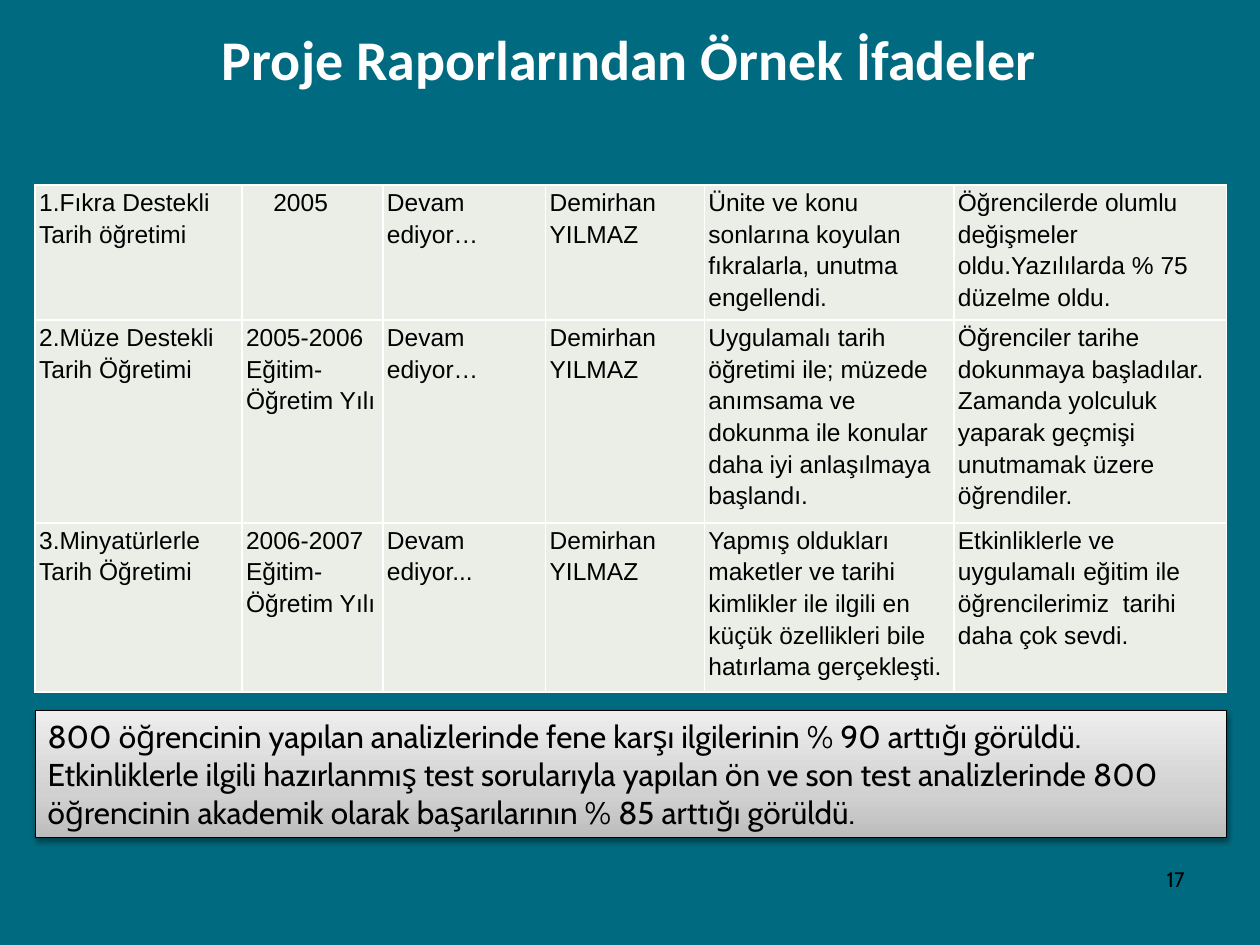
import pptx
import pptx.dml.color
import pptx.enum.shapes
import pptx.enum.text
import pptx.oxml
import pptx.oxml.ns
import pptx.util

Cm, Pt = pptx.util.Cm, pptx.util.Pt
Align, Anchor = pptx.enum.text.PP_ALIGN, pptx.enum.text.MSO_ANCHOR
NS = pptx.oxml.ns.nsdecls("a")

HUES = {"back": "006B80", "cell": "EBEDE7", "white": "FFFFFF", "black": "000000"}
FADE = [(0, "BDBDBD"), (35, "D1D1D1"), (100, "EEEEEE")]

TITLE = "Proje Raporlarından Örnek İfadeler"
STATE, NAME = "Devam ediyor…", "Demirhan YILMAZ"
ROWS = [
    ("1.Fıkra Destekli Tarih öğretimi", "2005", STATE, NAME,
     "Ünite ve konu sonlarına koyulan fıkralarla, unutma engellendi.",
     "Öğrencilerde olumlu değişmeler oldu.Yazılılarda % 75 düzelme oldu."),
    ("2.Müze Destekli Tarih Öğretimi", "2005-2006 Eğitim-Öğretim Yılı", STATE, NAME,
     "Uygulamalı tarih öğretimi ile; müzede anımsama ve dokunma ile konular daha iyi anlaşılmaya başlandı.",
     "Öğrenciler tarihe dokunmaya başladılar. Zamanda yolculuk yaparak geçmişi unutmamak üzere öğrendiler."),
    ("3.Minyatürlerle Tarih Öğretimi", "2006-2007 Eğitim-Öğretim Yılı", "Devam ediyor...", NAME,
     "Yapmış oldukları maketler ve tarihi kimlikler ile ilgili en küçük özellikleri bile hatırlama gerçekleşti.",
     "Etkinliklerle ve uygulamalı eğitim ile öğrencilerimiz  tarihi daha çok sevdi."),
]
NOTE = ("800 öğrencinin yapılan analizlerinde fene karşı ilgilerinin % 90 arttığı görüldü. "
        "Etkinliklerle ilgili hazırlanmış test sorularıyla yapılan ön ve son test analizlerinde "
        "800 öğrencinin akademik olarak başarılarının % 85 arttığı görüldü.")
PAGE = "17"

WIDE = [4.17, 2.84, 3.28, 3.2, 5.03, 5.49]
HIGH = [2.69, 4.06, 3.4]
LEFT, SPAN = 0.71, sum(WIDE)
INSET, INDENT = 0.08, 0.55

FONTS = {
    "title": {"name": "Calibri", "size": Pt(32), "bold": True},
    "cell": {"name": "Arial", "size": Pt(14)},
    "note": {"name": "Cabin", "size": Pt(18)},
    "page": {"name": "Cabin", "size": Pt(12)},
}


def apply(item, vals):
    for key, val in vals.items():
        setattr(item, key, val)


def tint(hue):
    return pptx.dml.color.RGBColor.from_string(HUES[hue])


def write(frame, text, font, hue="black", **form):
    frame.word_wrap = True
    para = frame.paragraphs[0]
    para.text = text
    apply(para, form)
    run = para.runs[0]
    apply(run.font, FONTS[font])
    run.font.color.rgb = tint(hue)


def label(slide, place, text, font, anchor=Anchor.TOP, **form):
    frame = slide.shapes.add_textbox(*map(Cm, place)).text_frame
    frame.vertical_anchor = anchor
    write(frame, text, font, **form)


def edge(cell):
    props = cell._tc.get_or_add_tcPr()
    for side in "LRTB":
        props.append(pptx.oxml.parse_xml(
            f'<a:ln{side} {NS} w="12700"><a:solidFill><a:srgbClr val="{HUES["white"]}"/>'
            f'</a:solidFill></a:ln{side}>'))


def grid(slide):
    place = (LEFT, 3.73, SPAN, sum(HIGH))
    table = slide.shapes.add_table(len(HIGH), len(WIDE), *map(Cm, place)).table
    apply(table, {"first_row": False, "horz_banding": False})
    for col, size in zip(table.columns, WIDE):
        col.width = Cm(size)
    for row, size, texts in zip(table.rows, HIGH, ROWS):
        row.height = Cm(size)
        for cell, text in zip(row.cells, texts):
            inset = INSET + INDENT if text == "2005" else INSET
            apply(cell, {"margin_left": Cm(inset), "margin_right": Cm(INSET),
                         "margin_top": 0, "margin_bottom": 0})
            edge(cell)
            cell.fill.solid()
            cell.fill.fore_color.rgb = tint("cell")
            write(cell.text_frame, text, "cell", line_spacing=1.15, space_after=Pt(10))


def panel(slide):
    kind = pptx.enum.shapes.MSO_SHAPE.RECTANGLE
    box = slide.shapes.add_shape(kind, *map(Cm, (LEFT, 14.33, SPAN, 2.56)))
    props = box._element.spPr
    stops = "".join(f'<a:gs pos="{pos * 1000}"><a:srgbClr val="{hue}"/></a:gs>' for pos, hue in FADE)
    props.append(pptx.oxml.parse_xml(
        f'<a:gradFill {NS} rotWithShape="1"><a:gsLst>{stops}</a:gsLst>'
        '<a:lin ang="16200000" scaled="0"/></a:gradFill>'))
    box.line.color.rgb = tint("black")
    box.line.width = Pt(0.75)
    box.shadow.inherit = False
    props.find(pptx.oxml.ns.qn("a:effectLst")).append(pptx.oxml.parse_xml(
        f'<a:outerShdw {NS} blurRad="{Pt(3.1)}" dist="{Pt(1.6)}" dir="5400000" rotWithShape="0">'
        f'<a:srgbClr val="{HUES["black"]}"><a:alpha val="38000"/></a:srgbClr></a:outerShdw>'))
    apply(box.text_frame, {"vertical_anchor": Anchor.TOP,
                           "auto_size": pptx.enum.text.MSO_AUTO_SIZE.SHAPE_TO_FIT_TEXT})
    write(box.text_frame, NOTE, "note", alignment=Align.LEFT)


def main():
    deck = pptx.Presentation()
    apply(deck, {"slide_width": Cm(25.4), "slide_height": Cm(19.05)})
    slide = deck.slides.add_slide(deck.slide_layouts[6])
    slide.background.fill.solid()
    slide.background.fill.fore_color.rgb = tint("back")
    label(slide, (2.69, 0, 20, 2.34), TITLE, "title", Anchor.MIDDLE,
          hue="white", alignment=Align.CENTER)
    grid(slide)
    label(slide, (18.21, 17.35, 5.92, 1.32), PAGE, "page", alignment=Align.RIGHT)
    panel(slide)
    deck.save("out.pptx")


if __name__ == "__main__":
    main()
